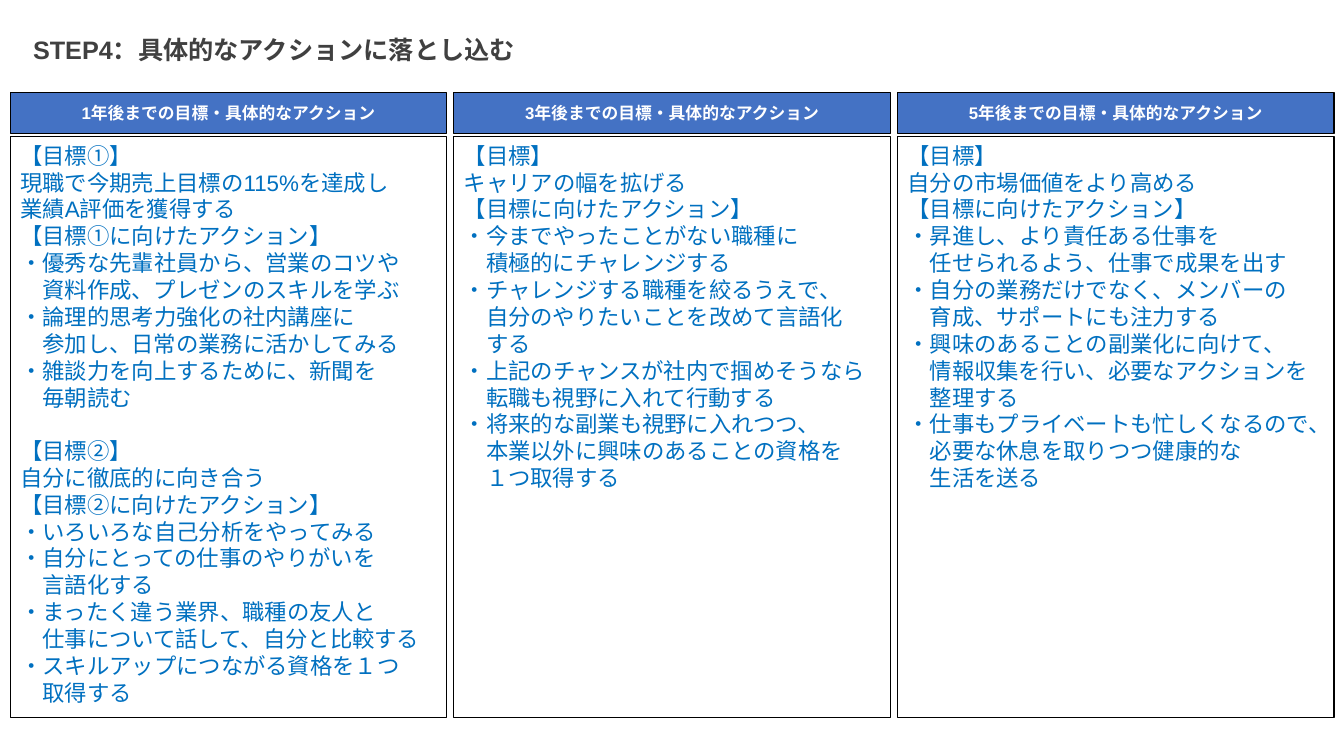
import pptx
import pptx.dml.color
import pptx.enum.shapes
import pptx.enum.text
import pptx.util

Cm, Pt = pptx.util.Cm, pptx.util.Pt
PP_ALIGN = pptx.enum.text.PP_ALIGN
ANCHOR = pptx.enum.text.MSO_ANCHOR
COLORS = {"title": "404040", "header": "4472C4", "white": "FFFFFF",
          "border": "000000", "body": "0070C0"}

# One entry per column: years, then blocks of lines; ">" marks an indented line
COLUMNS = [
    (1, [
        ["【目標①】",
         "現職で今期売上目標の115%を達成し",
         "業績A評価を獲得する",
         "【目標①に向けたアクション】",
         "・優秀な先輩社員から、営業のコツや",
         ">資料作成、プレゼンのスキルを学ぶ",
         "・論理的思考力強化の社内講座に",
         ">参加し、日常の業務に活かしてみる",
         "・雑談力を向上するために、新聞を",
         ">毎朝読む"],
        ["【目標②】",
         "自分に徹底的に向き合う",
         "【目標②に向けたアクション】",
         "・いろいろな自己分析をやってみる",
         "・自分にとっての仕事のやりがいを",
         ">言語化する",
         "・まったく違う業界、職種の友人と",
         ">仕事について話して、自分と比較する",
         "・スキルアップにつながる資格を１つ",
         ">取得する"],
    ]),
    (3, [
        ["【目標】",
         "キャリアの幅を拡げる",
         "【目標に向けたアクション】",
         "・今までやったことがない職種に",
         ">積極的にチャレンジする",
         "・チャレンジする職種を絞るうえで、",
         ">自分のやりたいことを改めて言語化",
         ">する",
         "・上記のチャンスが社内で掴めそうなら",
         ">転職も視野に入れて行動する",
         "・将来的な副業も視野に入れつつ、",
         ">本業以外に興味のあることの資格を",
         ">１つ取得する"],
    ]),
    (5, [
        ["【目標】",
         "自分の市場価値をより高める",
         "【目標に向けたアクション】",
         "・昇進し、より責任ある仕事を",
         ">任せられるよう、仕事で成果を出す",
         "・自分の業務だけでなく、メンバーの",
         ">育成、サポートにも注力する",
         "・興味のあることの副業化に向けて、",
         ">情報収集を行い、必要なアクションを",
         ">整理する",
         "・仕事もプライベートも忙しくなるので、",
         ">必要な休息を取りつつ健康的な",
         ">生活を送る"],
    ]),
]


def add_run(p, text, size, color, bold=False):
    r = p.add_run()
    r.text = text
    r.font.name = "Arial"
    r.font.size = Pt(size)
    r.font.bold = bold
    r.font.color.rgb = pptx.dml.color.RGBColor.from_string(COLORS[color])


def add_box(left, top, width, height, fill):
    sp = s.shapes.add_shape(pptx.enum.shapes.MSO_SHAPE.RECTANGLE,
                            Cm(left), Cm(top), Cm(width), Cm(height))
    sp.shadow.inherit = False
    sp.fill.solid()
    sp.fill.fore_color.rgb = pptx.dml.color.RGBColor.from_string(COLORS[fill])
    sp.line.color.rgb = pptx.dml.color.RGBColor.from_string(COLORS["border"])
    sp.line.width = Pt(0.75)
    return sp.text_frame


prs = pptx.Presentation()
prs.slide_width, prs.slide_height = Cm(33.87), Cm(19.05)
s = prs.slides.add_slide(prs.slide_layouts[5])

# Title
title = s.shapes.title
title.left, title.top, title.width, title.height = Cm(0.58), Cm(0.74), Cm(23.08), Cm(1.02)
tf = title.text_frame
tf.auto_size = pptx.enum.text.MSO_AUTO_SIZE.NONE
tf.vertical_anchor = ANCHOR.TOP
p = tf.paragraphs[0]
p.alignment = PP_ALIGN.LEFT
add_run(p, "STEP4：具体的なアクションに落とし込む", 18, "title", True)

# Columns: a header bar above a box of goals and actions
for i, (years, blocks) in enumerate(COLUMNS):
    left = 0.26 + i * 11.18

    tf = add_box(left, 2.34, 11, 1.02, "header")
    tf.word_wrap = False
    tf.vertical_anchor = ANCHOR.MIDDLE
    p = tf.paragraphs[0]
    p.alignment = PP_ALIGN.CENTER
    add_run(p, f"{years}年後までの目標・具体的なアクション", 12, "white", True)

    tf = add_box(left, 3.45, 11, 14.63, "white")
    tf.word_wrap = True
    tf.vertical_anchor = ANCHOR.TOP
    for b, lines in enumerate(blocks):
        for n, line in enumerate(lines):
            first = b == 0 and n == 0
            p = tf.paragraphs[0] if first else tf.add_paragraph()
            p.alignment = PP_ALIGN.LEFT
            if b > 0 and n == 0:
                p.space_before = Pt(19)
            if line.startswith(">"):
                p._p.get_or_add_pPr().set("marL", str(Cm(0.56)))
            add_run(p, line.lstrip(">"), 16, "body")

prs.save("out.pptx")
